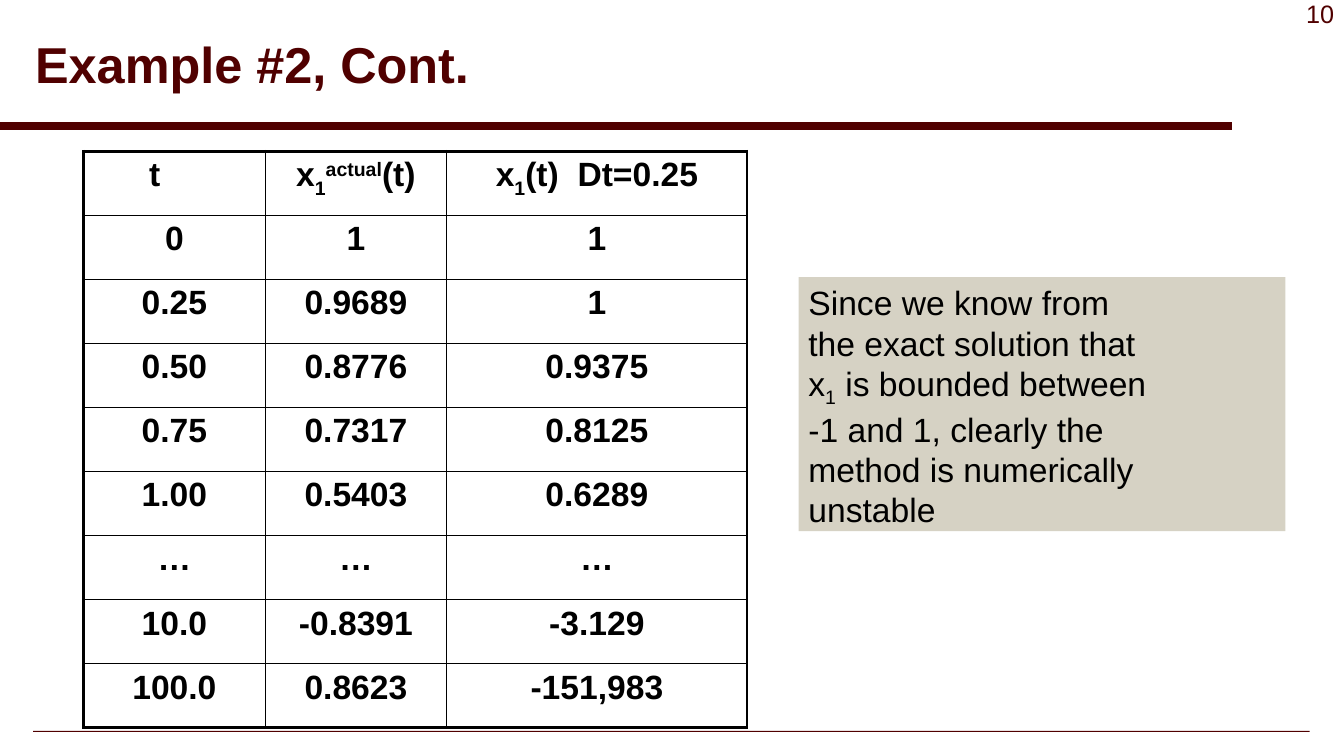
import pptx
import pptx.dml.color
import pptx.enum.shapes
import pptx.enum.text
import pptx.oxml
import pptx.oxml.ns
import pptx.util
from pptx.util import Inches

MAROON = pptx.dml.color.RGBColor(0x50, 0x00, 0x00)
SAND = pptx.dml.color.RGBColor(0xD6, 0xD2, 0xC4)
BLACK = pptx.dml.color.RGBColor(0x00, 0x00, 0x00)

ALIGN = pptx.enum.text.PP_ALIGN
ANCHOR = pptx.enum.text.MSO_ANCHOR
SUBSCRIPT, SUPERSCRIPT = -25, 30
THIN, THICK = 1, 2.25

TABLE_COLUMNS = [1.8, 1.8, 2.98]
TABLE_HEIGHT = 5.72
TABLE_ROWS = [
    [
        ["t\t"],
        ["x", ("1", SUBSCRIPT), ("actual", SUPERSCRIPT), "(t)"],
        ["x", ("1", SUBSCRIPT), "(t)  Dt=0.25"],
    ],
    ["0", "1", "1"],
    ["0.25", "0.9689", "1"],
    ["0.50", "0.8776", "0.9375"],
    ["0.75", "0.7317", "0.8125"],
    ["1.00", "0.5403", "0.6289"],
    ["…", "…", "…"],
    ["10.0", "-0.8391", "-3.129"],
    ["100.0", "0.8623", "-151,983"],
]
CONCLUSION = [
    "Since we know from\nthe exact solution that\nx",
    ("1", SUBSCRIPT),
    " is bounded between\n-1 and 1, clearly the\nmethod is numerically\nunstable",
]


def write_text(frame, text, size=24, color=BLACK, bold=False,
               align=ALIGN.LEFT, anchor=ANCHOR.TOP, line_spacing=None):
    """Fill a frame with a string or a list of strings and (string, baseline) pairs."""
    frame.word_wrap = True
    frame.vertical_anchor = anchor
    paragraph = frame.paragraphs[0]
    paragraph.alignment = align
    paragraph.line_spacing = line_spacing
    for piece in [text] if isinstance(text, str) else text:
        words, baseline = (piece, 0) if isinstance(piece, str) else piece
        for index, line in enumerate(words.split("\n")):
            if index:
                paragraph.add_line_break()
            run = paragraph.add_run()
            run.text = line
            run.font.name = "Arial"
            run.font.size = pptx.util.Pt(size)
            run.font.bold = bold
            run.font.color.rgb = color
            if baseline:
                run._r.get_or_add_rPr().set("baseline", str(baseline * 1000))


def set_borders(cell, **widths):
    """Draw black cell borders; keys are lnL, lnR, lnT and lnB, widths in points."""
    properties = cell._tc.get_or_add_tcPr()
    for position, (tag, width) in enumerate(widths.items()):
        border = pptx.oxml.parse_xml(
            f'<a:{tag} {pptx.oxml.ns.nsdecls("a")} w="{int(pptx.util.Pt(width))}">'
            f'<a:solidFill><a:srgbClr val="{BLACK}"/></a:solidFill></a:{tag}>'
        )
        properties.insert(position, border)


class SlideBuilder:
    def __init__(self, presentation):
        self.slide = presentation.slides.add_slide(presentation.slide_layouts[6])
        self.shapes = self.slide.shapes

    def text(self, text, left, top, width, height, **text_format):
        box = self.shapes.add_textbox(
            Inches(left), Inches(top), Inches(width), Inches(height))
        write_text(box.text_frame, text, **text_format)

    def rectangle(self, left, top, width, height, fill):
        shape = self.shapes.add_shape(
            pptx.enum.shapes.MSO_SHAPE.RECTANGLE,
            Inches(left), Inches(top), Inches(width), Inches(height))
        shape.shadow.inherit = False
        shape.fill.solid()
        shape.fill.fore_color.rgb = fill
        shape.line.fill.background()
        return shape

    def line(self, start_x, start_y, end_x, end_y, color, width):
        connector = self.shapes.add_connector(
            pptx.enum.shapes.MSO_CONNECTOR.STRAIGHT,
            Inches(start_x), Inches(start_y), Inches(end_x), Inches(end_y))
        connector.line.color.rgb = color
        connector.line.width = pptx.util.Pt(width)
        connector._element.spPr.append(
            pptx.oxml.parse_xml(f'<a:effectLst {pptx.oxml.ns.nsdecls("a")}/>'))

    def table(self, rows, column_widths, left, top, height):
        """Add a table of equal rows with thin inner and thick outer borders."""
        last_row, last_column = len(rows) - 1, len(column_widths) - 1
        table = self.shapes.add_table(
            len(rows), len(column_widths), Inches(left), Inches(top),
            Inches(sum(column_widths)), Inches(height)).table
        table.first_row = table.horz_banding = False
        for column, width in zip(table.columns, column_widths):
            column.width = Inches(width)
        for row_index, row in enumerate(rows):
            for column_index, text in enumerate(row):
                cell = table.cell(row_index, column_index)
                cell.fill.background()
                write_text(cell.text_frame, text, bold=True, align=ALIGN.CENTER)
                set_borders(
                    cell,
                    lnL=THICK if column_index == 0 else THIN,
                    lnR=THICK if column_index == last_column else THIN,
                    lnT=THICK if row_index == 0 else THIN,
                    lnB=THICK if row_index == last_row else THIN)


def main():
    presentation = pptx.Presentation()
    presentation.slide_width = Inches(13.33)
    presentation.slide_height = Inches(7.5)
    builder = SlideBuilder(presentation)

    builder.rectangle(0.33, 7.25, 12.66, 0.01, MAROON)
    builder.line(0, 1.25, 12.22, 1.25, MAROON, 6)
    builder.text("10", 12.13, -0.07, 1.2, 0.4, size=18, color=MAROON, align=ALIGN.RIGHT)
    builder.text("Example #2, Cont.", 0.25, 0.08, 11.92, 1.17, size=36, color=MAROON,
                 bold=True, anchor=ANCHOR.MIDDLE, line_spacing=0.9)
    builder.table(TABLE_ROWS, TABLE_COLUMNS, 0.83, 1.5, TABLE_HEIGHT)
    conclusion = builder.rectangle(7.92, 2.75, 4.83, 2.52, SAND)
    write_text(conclusion.text_frame, CONCLUSION)

    presentation.save("out.pptx")


if __name__ == "__main__":
    main()
